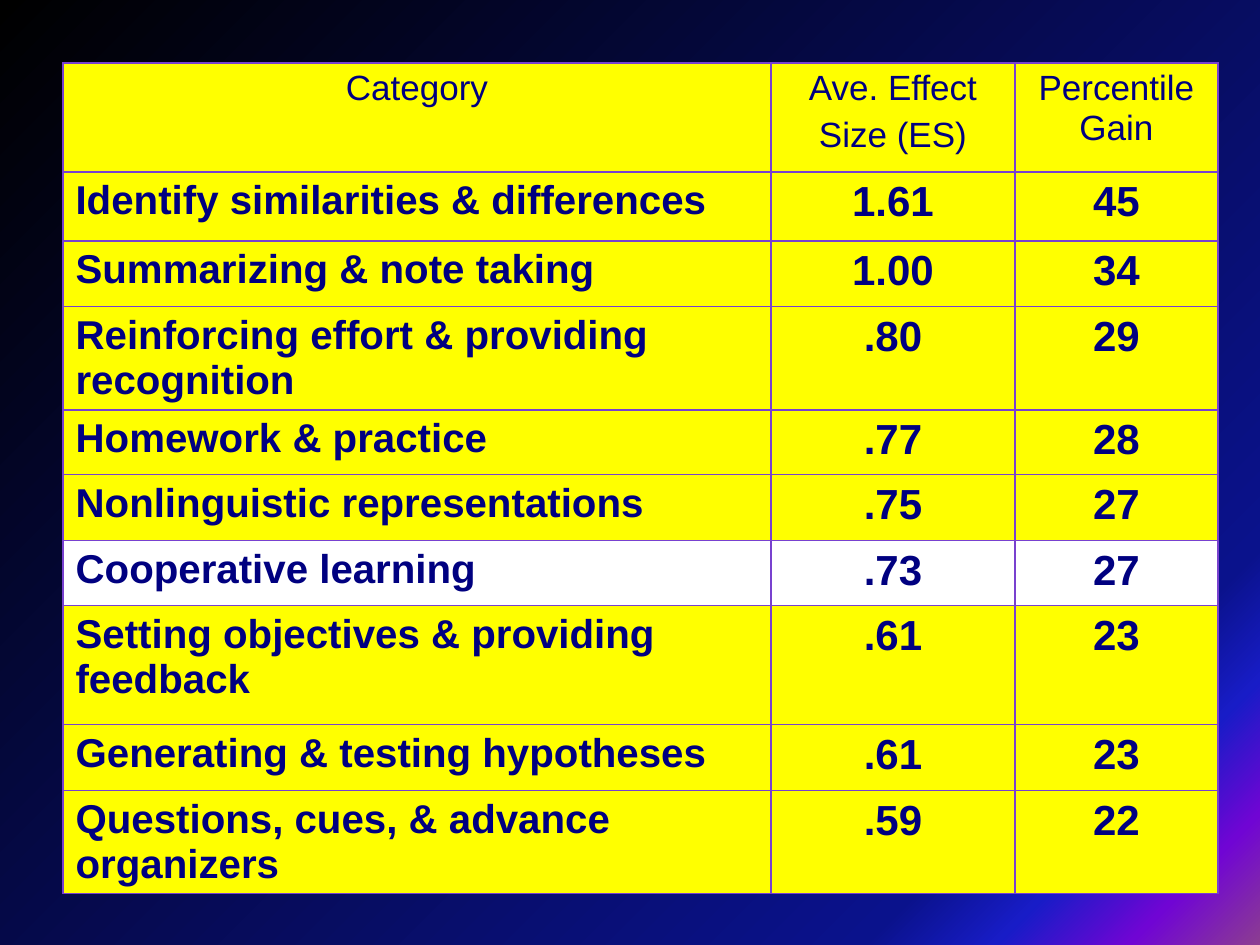
from dataclasses import dataclass

from pptx import Presentation
from pptx.dml.color import RGBColor
from pptx.enum.text import PP_ALIGN
from pptx.oxml import parse_xml
from pptx.oxml.ns import nsdecls, qn
from pptx.util import Emu, Pt


@dataclass(frozen=True)
class Theme:
    """Colours, font and type sizes."""
    font: str = "Arial"
    ink: str = "000080"
    fill: str = "FFFF00"
    accent: str = "FFFFFF"
    rule: str = "7841CF"
    head: int = 20
    label: int = 23
    value: int = 24
    stops: tuple = ((0, "000000"), (82, "0A128C"), (88, "181CC7"),
                    (94, "7005D4"), (100, "8C3D91"))


THEME = Theme()
BOX = (63, 63, 1155, 831)
VALUES = 244, 203
HEIGHTS = 109, 69, 66, 103, 65, 66, 65, 119, 66, 103
PICKED = "Cooperative learning"
ROWS = (
    ("Category", "Ave. Effect\nSize (ES)", "Percentile Gain"),
    ("Identify similarities & differences", "1.61", "45"),
    ("Summarizing & note taking", "1.00", "34"),
    ("Reinforcing effort & providing recognition", ".80", "29"),
    ("Homework & practice", ".77", "28"),
    ("Nonlinguistic representations", ".75", "27"),
    (PICKED, ".73", "27"),
    ("Setting objectives & providing feedback", ".61", "23"),
    ("Generating & testing hypotheses", ".61", "23"),
    ("Questions, cues, & advance organizers", ".59", "22"),
)


def px(count):
    """Turn pixels into EMU."""
    return Emu(round(count * 914400 / 126))


def paint_back(slide):
    """Fill the background with the diagonal gradient."""
    slide.background.fill.gradient()
    old = next(slide.element.iter(qn("a:gradFill")))
    stops = "".join(
        f'<a:gs pos="{spot * 1000}"><a:srgbClr val="{tint}"/></a:gs>'
        for spot, tint in THEME.stops)
    new = parse_xml(
        f'<a:gradFill {nsdecls("a")} rotWithShape="1"><a:gsLst>{stops}</a:gsLst>'
        '<a:lin ang="2700000" scaled="0"/></a:gradFill>')
    old.getparent().replace(old, new)


def rule_cell(cell):
    """Draw the four borders of a cell."""
    props = cell._tc.get_or_add_tcPr()
    for spot, side in enumerate("LRTB"):
        props.insert(spot, parse_xml(
            f'<a:ln{side} {nsdecls("a")} w="{Pt(0.75)}"><a:solidFill>'
            f'<a:srgbClr val="{THEME.rule}"/></a:solidFill></a:ln{side}>'))


def fill_cell(cell, text, tint, size, bold, align):
    """Write and format one cell."""
    cell.fill.solid()
    cell.fill.fore_color.rgb = RGBColor.from_string(tint)
    rule_cell(cell)
    cell.text_frame.text = text
    for spot, para in enumerate(cell.text_frame.paragraphs):
        para.alignment = align
        para.space_before = Pt(size * 0.2 if spot else 0)
        for run in para.runs:
            run.font.name = THEME.font
            run.font.size = Pt(size)
            run.font.bold = bold
            run.font.color.rgb = RGBColor.from_string(THEME.ink)


def add_grid(slide, box):
    """Place the table of effect sizes in the box."""
    left, top, width, height = box
    frame = slide.shapes.add_table(
        len(ROWS), len(ROWS[0]), px(left), px(top), px(width), px(height))
    table = frame.table
    table.first_row = table.horz_banding = False
    for col, span in zip(table.columns, (width - sum(VALUES), *VALUES)):
        col.width = px(span)
    for row, span in zip(table.rows, HEIGHTS):
        row.height = px(span)
    for line, texts in enumerate(ROWS):
        tint = THEME.accent if texts[0] == PICKED else THEME.fill
        for spot, text in enumerate(texts):
            body = line > 0
            size = (THEME.value if spot else THEME.label) if body else THEME.head
            align = PP_ALIGN.LEFT if body and not spot else PP_ALIGN.CENTER
            fill_cell(table.cell(line, spot), text, tint, size, body, align)


def main():
    """Build and save the slide."""
    deck = Presentation()
    deck.slide_width, deck.slide_height = px(1260), px(945)
    slide = deck.slides.add_slide(deck.slide_layouts[6])
    paint_back(slide)
    add_grid(slide, BOX)
    deck.save("out.pptx")


if __name__ == "__main__":
    main()
